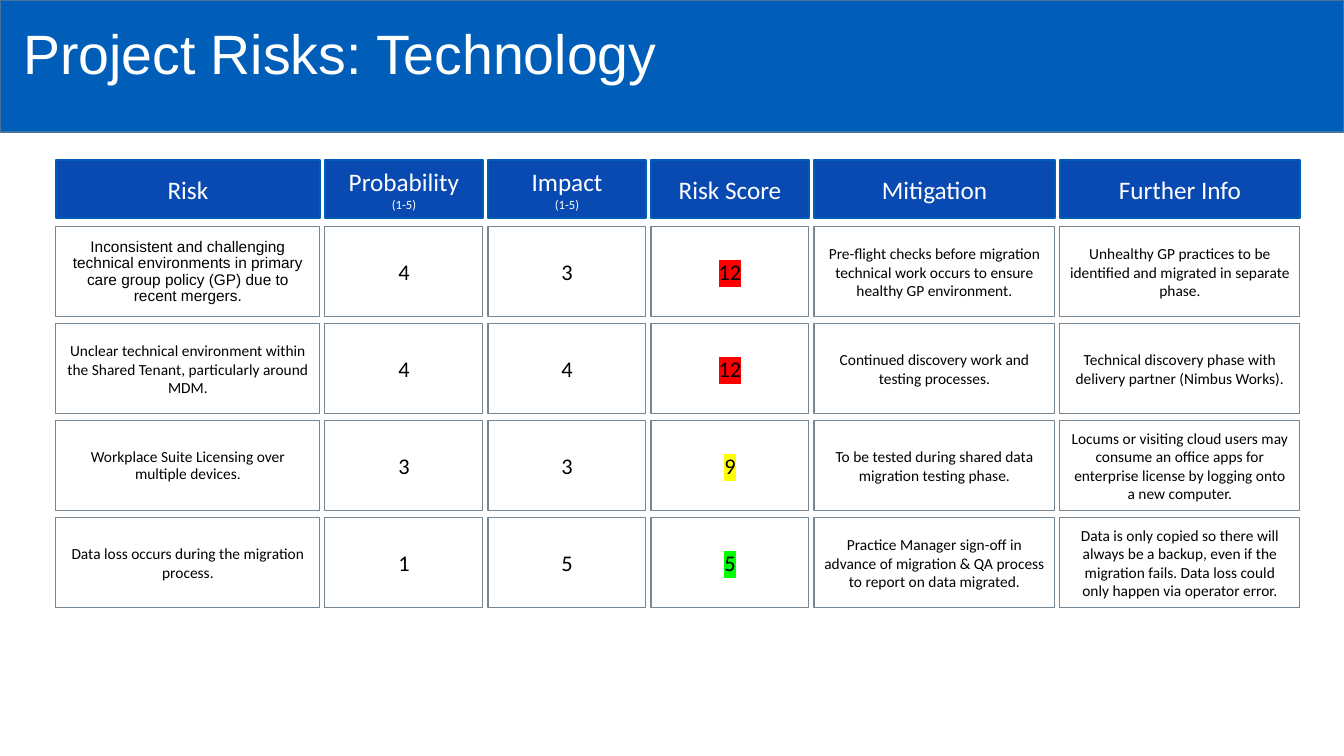
from lxml.etree import SubElement
from pptx import Presentation
from pptx.dml.color import RGBColor
from pptx.enum.shapes import MSO_SHAPE
from pptx.enum.text import MSO_ANCHOR, MSO_AUTO_SIZE, PP_ALIGN
from pptx.oxml.ns import qn
from pptx.util import Pt

EMU_PER_PX = 914400 / 100.8
BLUE = RGBColor(0x00, 0x5E, 0xB8)
HEADER_BLUE = RGBColor(0x09, 0x4A, 0xB2)
BANNER_EDGE = RGBColor(0x43, 0x73, 0x9E)
GREY = RGBColor(0x76, 0x86, 0x92)
WHITE = RGBColor(0xFF, 0xFF, 0xFF)
BLACK = RGBColor(0x00, 0x00, 0x00)
RED = RGBColor(0xFF, 0x00, 0x00)
YELLOW = RGBColor(0xFF, 0xFF, 0x00)
GREEN = RGBColor(0x00, 0xFF, 0x00)

# Grid, in px
LEFT, GAP = 56, 5
COL_WIDTHS = [264, 158, 158, 158, 241, 240]
HEADER_TOP, HEADER_HEIGHT = 160, 58
ROW_TOP, ROW_PITCH, ROW_HEIGHT = 227, 97, 90

HEADERS = [("Risk", ""), ("Probability", "(1-5)"), ("Impact", "(1-5)"),
           ("Risk Score", ""), ("Mitigation", ""), ("Further Info", "")]
# Cells of each risk, its score colour, and the font and line spacing of its name
RISKS = [
    (["Inconsistent and challenging technical environments in primary care "
      "group policy (GP) due to recent mergers.", "4", "3", "12",
      "Pre-flight checks before migration technical work occurs to ensure "
      "healthy GP environment.",
      "Unhealthy GP practices to be identified and migrated in separate phase."],
     RED, "Arial", 0.9),
    (["Unclear technical environment within the Shared Tenant, particularly "
      "around MDM.", "4", "4", "12",
      "Continued discovery work and testing processes.",
      "Technical discovery phase with delivery partner (Nimbus Works)."],
     RED, "Calibri", None),
    (["Workplace Suite Licensing over multiple devices.", "3", "3", "9",
      "To be tested during shared data migration testing phase.",
      "Locums or visiting cloud users may consume an office apps for "
      "enterprise license by logging onto a new computer."],
     YELLOW, "Calibri", 0.9),
    (["Data loss occurs during the migration process.", "1", "5", "5",
      "Practice Manager sign-off in advance of migration & QA process to "
      "report on data migrated.",
      "Data is only copied so there will always be a backup, even if the "
      "migration fails. Data loss could only happen via operator error."],
     GREEN, "Calibri", None),
]


def px(n):
    return round(n * EMU_PER_PX)


class RiskSlide:
    def __init__(self, prs):
        self.font = "Calibri"
        self.s = prs.slides.add_slide(prs.slide_layouts[5])

    def run(self, p, text, size, color, font=None, highlight=None):
        r = p.add_run()
        r.text = text
        r.font.size = Pt(size)
        r.font.color.rgb = color
        if highlight is not None:
            mark = SubElement(r.font._element, qn("a:highlight"))
            SubElement(mark, qn("a:srgbClr"), val=str(highlight))
        r.font.name = font or self.font

    def box(self, x, y, w, h, fill, edge, weight):
        sp = self.s.shapes.add_shape(MSO_SHAPE.RECTANGLE, px(x), px(y), px(w), px(h))
        sp.shadow.inherit = False
        if fill is None:
            sp.fill.background()
        else:
            sp.fill.solid()
            sp.fill.fore_color.rgb = fill
        sp.line.color.rgb = edge
        sp.line.width = Pt(weight)
        tf = sp.text_frame
        tf.word_wrap = True
        tf.vertical_anchor = MSO_ANCHOR.MIDDLE
        tf.paragraphs[0].alignment = PP_ALIGN.CENTER
        return sp

    def title(self, text):
        sp = self.s.shapes.title
        sp.left, sp.top, sp.width, sp.height = px(13), px(2), px(707), px(110)
        tf = sp.text_frame
        tf.word_wrap = True
        tf.auto_size = MSO_AUTO_SIZE.NONE
        tf.vertical_anchor = MSO_ANCHOR.MIDDLE
        p = tf.paragraphs[0]
        p.alignment = PP_ALIGN.LEFT
        p.line_spacing = 0.9
        self.run(p, text, 39.6, WHITE, "Arial")

    def banner(self):
        sp = self.box(0, 0, 1344, 132, BLUE, BANNER_EDGE, 1)
        self.s.shapes.title._element.addprevious(sp._element)

    def header(self, x, w, label, note):
        tf = self.box(x, HEADER_TOP, w, HEADER_HEIGHT, HEADER_BLUE, BLUE, 1).text_frame
        self.run(tf.paragraphs[0], label, 18, WHITE)
        if note:
            p = tf.add_paragraph()
            p.alignment = PP_ALIGN.CENTER
            self.run(p, note, 9, WHITE)

    def cell(self, x, y, w, text, size, font=None, spacing=None, highlight=None):
        tf = self.box(x, y, w, ROW_HEIGHT, None, GREY, 0.75).text_frame
        p = tf.paragraphs[0]
        p.line_spacing = spacing
        self.run(p, text, size, BLACK, font, highlight)


def main():
    prs = Presentation()
    prs.slide_width, prs.slide_height = px(1344), px(756)
    slide = RiskSlide(prs)

    # Title band
    slide.banner()
    slide.title("Project Risks: Technology")

    # Risk grid, column by column
    x = LEFT
    for col, (w, (label, note)) in enumerate(zip(COL_WIDTHS, HEADERS)):
        slide.header(x, w, label, note)
        for row, (cells, score_color, name_font, name_spacing) in enumerate(RISKS):
            y = ROW_TOP + row * ROW_PITCH
            if col == 0:
                slide.cell(x, y, w, cells[col], 11, name_font, name_spacing)
            elif label == "Risk Score":
                slide.cell(x, y, w, cells[col], 16, highlight=score_color)
            else:
                slide.cell(x, y, w, cells[col], 16 if col < 3 else 11)
        x += w + GAP

    prs.save("out.pptx")


if __name__ == "__main__":
    main()
